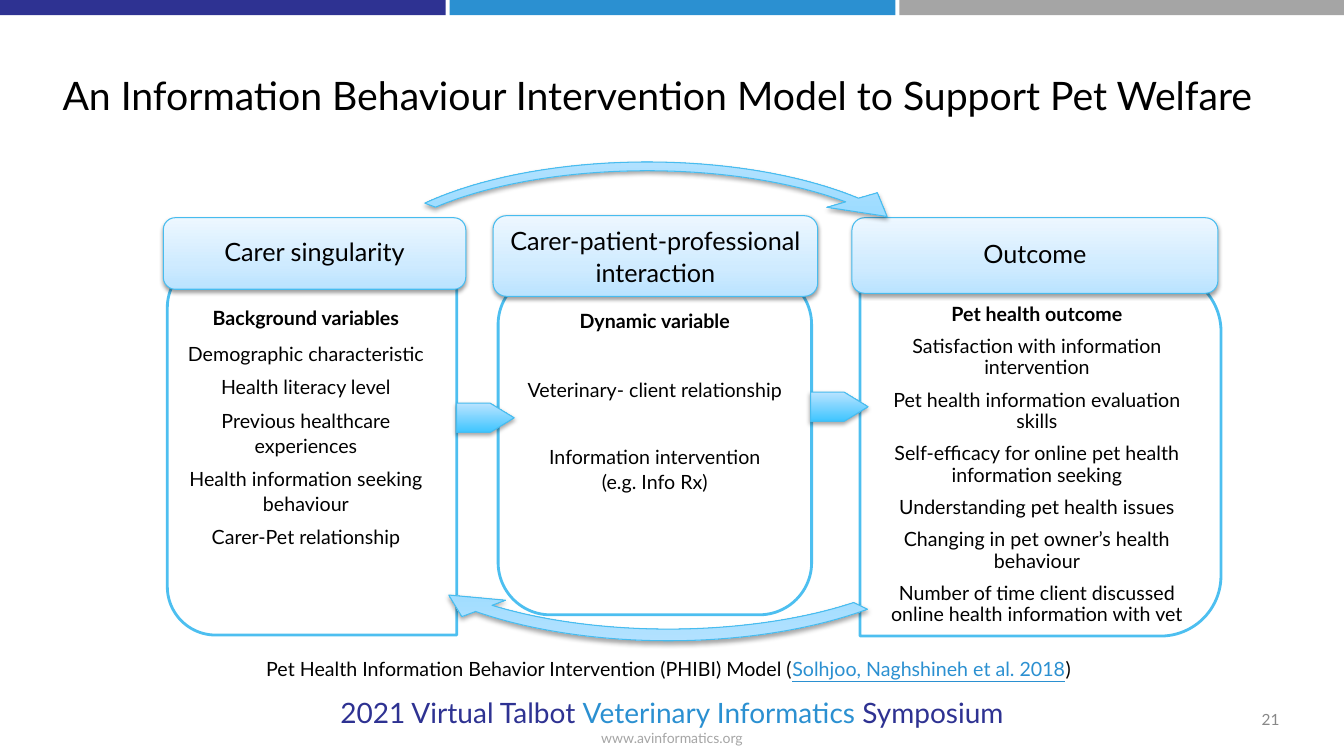
from lxml import etree
from pptx import Presentation
from pptx.dml.color import RGBColor
from pptx.enum.shapes import MSO_SHAPE as Preset
from pptx.enum.text import MSO_ANCHOR as Anchor, MSO_AUTO_SIZE as AutoSize, PP_ALIGN as Align
from pptx.oxml.ns import qn
from pptx.util import Inches, Pt

BLACK = RGBColor(0x00, 0x00, 0x00)
WHITE = RGBColor(0xFF, 0xFF, 0xFF)
NAVY = RGBColor(0x2E, 0x32, 0x92)
BLUE = RGBColor(0x2B, 0x90, 0xD1)
GREY = RGBColor(0xA5, 0xA5, 0xA5)
NUMBER_GREY = RGBColor(0x88, 0x88, 0x88)
PANEL_LINE = RGBColor(0x4D, 0xBF, 0xF0)
GLOSS_LINE = RGBColor(0x47, 0xBC, 0xEF)
SKY = RGBColor(0x3E, 0xC5, 0xFF)
PALE = RGBColor(0xBA, 0xE3, 0xFF)
PALER = RGBColor(0xCF, 0xEB, 0xFF)
PALEST = RGBColor(0xED, 0xF7, 0xFF)

HEADER_STOPS = [(0, PALE), (35, PALER), (100, PALEST)]
ARROW_STOPS = [(0, SKY), (100, PALE)]


def write_text(shape, paragraphs, insets=(0.1, 0.05, 0.1, 0.05), anchor=Anchor.TOP,
               align=Align.CENTER, spacing=1.0, after=0, wrap=True):
    frame = shape.text_frame
    left, top, right, bottom = map(Inches, insets)
    frame_format = {
        "auto_size": AutoSize.NONE, "word_wrap": wrap, "vertical_anchor": anchor,
        "margin_left": left, "margin_top": top, "margin_right": right, "margin_bottom": bottom,
    }
    for name, value in frame_format.items():
        setattr(frame, name, value)
    for index, (pieces, own_format) in enumerate(paragraphs):
        paragraph = frame.add_paragraph() if index else frame.paragraphs[0]
        paragraph_format = {"alignment": align, "line_spacing": spacing,
                            "space_before": Pt(0), "space_after": Pt(after)}
        for name, value in (paragraph_format | own_format).items():
            setattr(paragraph, name, value)
        for position, (text, size, color, font_format) in enumerate(pieces):
            if position and font_format.get("new_line"):
                paragraph.add_line_break()
            run = paragraph.add_run()
            run.text = text
            run.font.color.rgb = color
            values = {"name": "Lato", "size": Pt(size), "bold": font_format.get("bold", False),
                      "underline": font_format.get("underline", False)}
            for name, value in values.items():
                setattr(run.font, name, value)


def add_glossy(preset, box, stops, adjustments=(), opacity=35, distance=1.8):
    shape = slide.shapes.add_shape(preset, *map(Inches, box))
    for index, value in enumerate(adjustments):
        shape.adjustments[index] = value
    shape.line.color.rgb = GLOSS_LINE
    shape.line.width = Pt(0.75)
    shape.fill.gradient()
    shape.fill.gradient_angle = 90
    properties = shape._element.spPr
    stop_list = properties.find(qn("a:gradFill")).find(qn("a:gsLst"))
    for stop in list(stop_list):
        stop_list.remove(stop)
    for position, color in stops:
        stop = etree.SubElement(stop_list, qn("a:gs"), pos=str(position * 1000))
        etree.SubElement(stop, qn("a:srgbClr"), val=str(color))
    shape.shadow.inherit = False
    shadow = etree.SubElement(properties.find(qn("a:effectLst")), qn("a:outerShdw"),
                              blurRad=str(Pt(3.1)), dist=str(Pt(distance)),
                              dir="5400000", rotWithShape="0")
    shadow_color = etree.SubElement(shadow, qn("a:srgbClr"), val=str(BLACK))
    etree.SubElement(shadow_color, qn("a:alpha"), val=str(opacity * 1000))
    return shape


presentation = Presentation()
presentation.slide_width = Inches(13.33)
presentation.slide_height = Inches(7.5)
slide = presentation.slides.add_slide(presentation.slide_layouts[5])

title = slide.shapes.title
title_box = {"left": 0.52, "top": 0.25, "width": 12.21, "height": 1.45}
for name, value in title_box.items():
    setattr(title, name, Inches(value))
write_text(title, [([("An Information Behaviour Intervention Model to Support Pet Welfare",
                      28, BLACK, {})], {})],
           anchor=Anchor.MIDDLE, align=Align.LEFT, spacing=0.9)

for index, color in enumerate([NAVY, BLUE, GREY]):
    band = slide.shapes.add_shape(Preset.RECTANGLE, Inches(4.46 * index), 0,
                                  Inches(4.42), Inches(0.15))
    band.shadow.inherit = False
    band.fill.solid()
    band.fill.fore_color.rgb = color
    band.line.fill.background()

footer = slide.shapes.add_textbox(Inches(1.98), Inches(6.85), Inches(9.37), Inches(0.61))
write_text(footer, [
    ([("2021 Virtual Talbot ", 20, NAVY, {}), ("Veterinary Informatics ", 20, BLUE, {}),
      ("Symposium", 20, NAVY, {})], {}),
    ([("www.avinformatics.org", 10, GREY, {})], {}),
])

slide_number = slide.shapes.add_textbox(Inches(11.82), Inches(6.94), Inches(0.97), Inches(0.4))
write_text(slide_number, [([("21", 11, NUMBER_GREY, {})], {})],
           anchor=Anchor.MIDDLE, align=Align.RIGHT)

panels = []
for preset, box, rotation, adjustments in [
    (Preset.ROUNDED_RECTANGLE, (4.94, 2.7, 3.11, 3.4), 0, [0.167]),
    (Preset.ROUND_2_SAME_RECTANGLE, (1.23, 3, 3.73, 2.87), 270, [0.167, 0]),
    (Preset.ROUND_2_SAME_RECTANGLE, (8.51, 2.71, 3.62, 3.58), 90, [0.167, 0]),
]:
    panel = slide.shapes.add_shape(preset, *map(Inches, box))
    panel.rotation = rotation
    for index, value in enumerate(adjustments):
        panel.adjustments[index] = value
    panel.shadow.inherit = False
    panel.fill.solid()
    panel.fill.fore_color.rgb = WHITE
    panel.line.color.rgb = PANEL_LINE
    panel.line.width = Pt(2)
    panels.append(panel)

write_text(panels[0], [
    ([("Dynamic variable", 14, BLACK, {"bold": True})], {"space_after": Pt(32)}),
    ([("Veterinary- client relationship", 14, BLACK, {})], {"space_after": Pt(30)}),
    ([("Information intervention", 14, BLACK, {}),
      ("(e.g. Info Rx)", 14, BLACK, {"new_line": True})], {}),
], insets=(0, 0.2, 0, 0), spacing=1.05, after=6)

return_arrow = add_glossy(Preset.CIRCULAR_ARROW, (3.45, 3.64, 6.36, 2.89), ARROW_STOPS,
                          [0.04, 4.11, 199.54, 123.55, 0.08])
for flip in ("flipH", "flipV"):
    return_arrow._element.spPr.xfrm.set(flip, "1")

for text, box, spacing, after in [
    ("Carer singularity", (1.62, 2.16, 3, 0.71), 0.9, 4.2),
    ("Outcome", (8.45, 2.16, 3.63, 0.75), 0.9, 4.2),
    ("Carer-patient-professional interaction", (4.89, 2.14, 3.22, 0.8), 1.06, 8),
]:
    header = add_glossy(Preset.ROUNDED_RECTANGLE, box, HEADER_STOPS, opacity=38, distance=1.6)
    write_text(header, [([(text, 18, BLACK, {})], {})], insets=(0.05, 0.05, 0.05, 0.05),
               anchor=Anchor.MIDDLE, spacing=spacing, after=after)

add_glossy(Preset.CIRCULAR_ARROW, (3.24, 1.39, 6.36, 2.89), ARROW_STOPS,
           [0.03, 3.96, 202.37, 120.23, 0.09])
for left, top in [(4.53, 4), (8.04, 3.89)]:
    add_glossy(Preset.RIGHT_ARROW, (left, top, 0.57, 0.29), ARROW_STOPS, [1, 0.82])

for box, insets, spacing, after, heading, items in [
    ((1.66, 2.95, 2.77, 2.9), (0.04, 0.07, 0.06, 0.07), 1.06, 6, "Background variables", [
        "Demographic characteristic",
        "Health literacy level",
        "Previous healthcare experiences",
        "Health information seeking behaviour",
        "Carer-Pet relationship",
    ]),
    ((8.62, 2.95, 3.31, 2.68), (0.06, 0.07, 0.04, 0.07), 0.9, 8, "Pet health outcome", [
        "Satisfaction with information intervention",
        "Pet health information evaluation skills",
        "Self-efficacy for online pet health information seeking",
        "Understanding pet health issues",
        "Changing in pet owner’s health behaviour",
        "Number of time client discussed online health information with vet",
    ]),
]:
    variables = slide.shapes.add_textbox(*map(Inches, box))
    paragraphs = [([(heading, 14, BLACK, {"bold": True})], {"space_after": Pt(8)})]
    paragraphs += [([(item, 14, BLACK, {})], {}) for item in items]
    write_text(variables, paragraphs, insets=insets, spacing=spacing, after=after)

caption = slide.shapes.add_textbox(Inches(2.52), Inches(6.46), Inches(8.22), Inches(0.34))
write_text(caption, [([
    ("Pet Health Information Behavior Intervention (PHIBI) Model (", 14, BLACK, {}),
    ("Solhjoo, Naghshineh et al. 2018", 14, BLUE, {"underline": True}),
    (")", 14, BLACK, {}),
], {})], anchor=Anchor.MIDDLE, wrap=False)

presentation.save("out.pptx")
